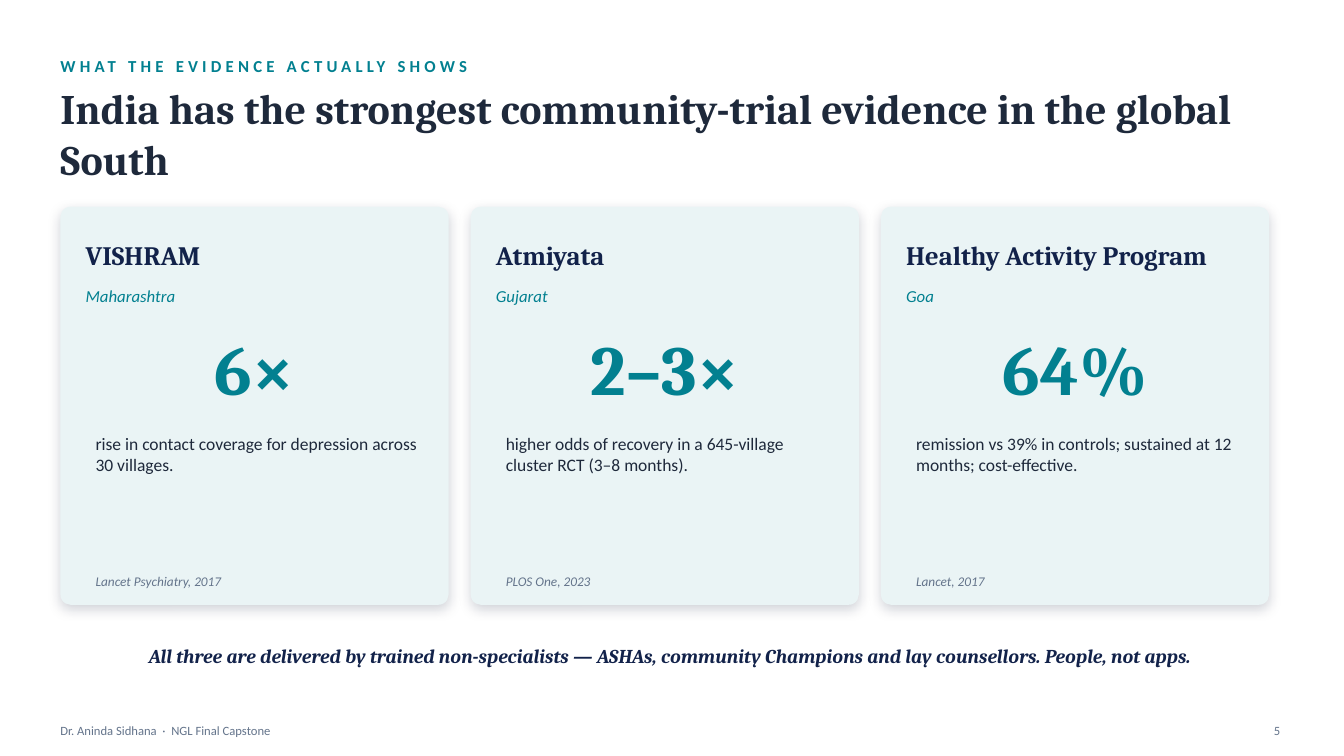
from lxml import etree
from pptx import Presentation
from pptx.dml.color import RGBColor
from pptx.enum.shapes import MSO_SHAPE
from pptx.enum.text import MSO_ANCHOR, PP_ALIGN
from pptx.oxml.ns import qn
from pptx.util import Pt

ROUND = MSO_SHAPE.ROUNDED_RECTANGLE
TOP, MIDDLE = MSO_ANCHOR.TOP, MSO_ANCHOR.MIDDLE
LEFT, CENTER, RIGHT = PP_ALIGN.LEFT, PP_ALIGN.CENTER, PP_ALIGN.RIGHT
HEAD, BODY = "Cambria", "Calibri"

COLORS = {
    "teal": "028090",
    "ink": "1E293B",
    "navy": "12224A",
    "slate": "64748B",
    "card": "EAF4F5",
    "shade": "0B1733",
    "white": "FFFFFF",
}

TRIALS = [
    ("VISHRAM", "Maharashtra", "6×",
     "rise in contact coverage for depression across 30 villages.",
     "Lancet Psychiatry, 2017"),
    ("Atmiyata", "Gujarat", "2–3×",
     "higher odds of recovery in a 645-village cluster RCT (3–8 months).",
     "PLOS One, 2023"),
    ("Healthy Activity Program", "Goa", "64%",
     "remission vs 39% in controls; sustained at 12 months; cost-effective.",
     "Lancet, 2017"),
]

MARGIN = 43.2
CARD_TOP, CARD_WIDTH, CARD_HEIGHT = 147.6, 277.2, 284.4
CARD_STEP = CARD_WIDTH + 15.84
PAD, INNER = 18, 244.8


def color(name):
    return RGBColor.from_string(COLORS[name])


def add_text(slide, text, left, top, width, height, *, size, tint, font=BODY,
             bold=False, italic=False, align=LEFT, anchor=MIDDLE,
             inset=True, spacing=0):
    box = slide.shapes.add_textbox(Pt(left), Pt(top), Pt(width), Pt(height))
    frame = box.text_frame
    frame.word_wrap = True
    frame.vertical_anchor = anchor
    if not inset:
        frame.margin_left = frame.margin_right = 0
        frame.margin_top = frame.margin_bottom = 0
    para = frame.paragraphs[0]
    para.alignment = align
    run = para.add_run()
    run.text = text
    run.font.name = font
    run.font.size = Pt(size)
    run.font.bold = bold
    run.font.italic = italic
    run.font.color.rgb = color(tint)
    if spacing:
        run.font._element.set("spc", str(spacing * 100))


def add_shadow(shape):
    shape.shadow.inherit = False
    effects = shape._element.spPr.find(qn("a:effectLst"))
    outer = etree.SubElement(
        effects, qn("a:outerShdw"), blurRad=str(Pt(9)), dist=str(Pt(3)),
        dir="5400000", algn="bl", rotWithShape="0")
    tint = etree.SubElement(outer, qn("a:srgbClr"), val=COLORS["shade"])
    etree.SubElement(tint, qn("a:alpha"), val="18000")


def add_card(slide, left, trial):
    name, state, figure, result, source = trial
    card = slide.shapes.add_shape(
        ROUND, Pt(left), Pt(CARD_TOP), Pt(CARD_WIDTH), Pt(CARD_HEIGHT))
    card.adjustments[0] = 0.026
    card.fill.solid()
    card.fill.fore_color.rgb = color("card")
    card.line.fill.background()
    add_shadow(card)

    inner = left + PAD
    add_text(slide, name, inner, 165.6, INNER, 32.4, size=19, tint="navy",
             font=HEAD, bold=True, inset=False)
    add_text(slide, state, inner, 200.16, INNER, 21.6, size=12, tint="teal",
             italic=True, inset=False)
    add_text(slide, figure, left + 7.2, 226.8, CARD_WIDTH - 14.4, 72, size=50,
             tint="teal", font=HEAD, bold=True, align=CENTER, inset=False)
    add_text(slide, result, inner, 306, INNER, 86.4, size=12.5, tint="ink",
             anchor=TOP)
    add_text(slide, source, inner, 404.64, INNER, 21.6, size=9.5,
             tint="slate", italic=True)


def main():
    deck = Presentation()
    deck.slide_width, deck.slide_height = Pt(960), Pt(540)
    slide = deck.slides.add_slide(deck.slide_layouts[6])
    slide.background.fill.solid()
    slide.background.fill.fore_color.rgb = color("white")

    add_text(slide, "WHAT THE EVIDENCE ACTUALLY SHOWS", MARGIN, 36, 648, 21.6,
             size=12, tint="teal", bold=True, inset=False, spacing=3)
    add_text(slide, "India has the strongest community-trial evidence in the "
             "global South", MARGIN, 59.04, 871.2, 68.4, size=30, tint="ink",
             font=HEAD, bold=True, anchor=TOP, inset=False)

    for index, trial in enumerate(TRIALS):
        add_card(slide, MARGIN + index * CARD_STEP, trial)

    add_text(slide, "All three are delivered by trained non-specialists — "
             "ASHAs, community Champions and lay counsellors. People, not "
             "apps.", MARGIN, 450, 871.2, 36, size=14, tint="navy", font=HEAD,
             bold=True, italic=True, align=CENTER)
    add_text(slide, "Dr. Aninda Sidhana  ·  NGL Final Capstone", 36, 511.2,
             576, 21.6, size=9, tint="slate")
    add_text(slide, "5", 892.8, 511.2, 28.8, 21.6, size=9, tint="slate",
             align=RIGHT)
    deck.save("out.pptx")


if __name__ == "__main__":
    main()
